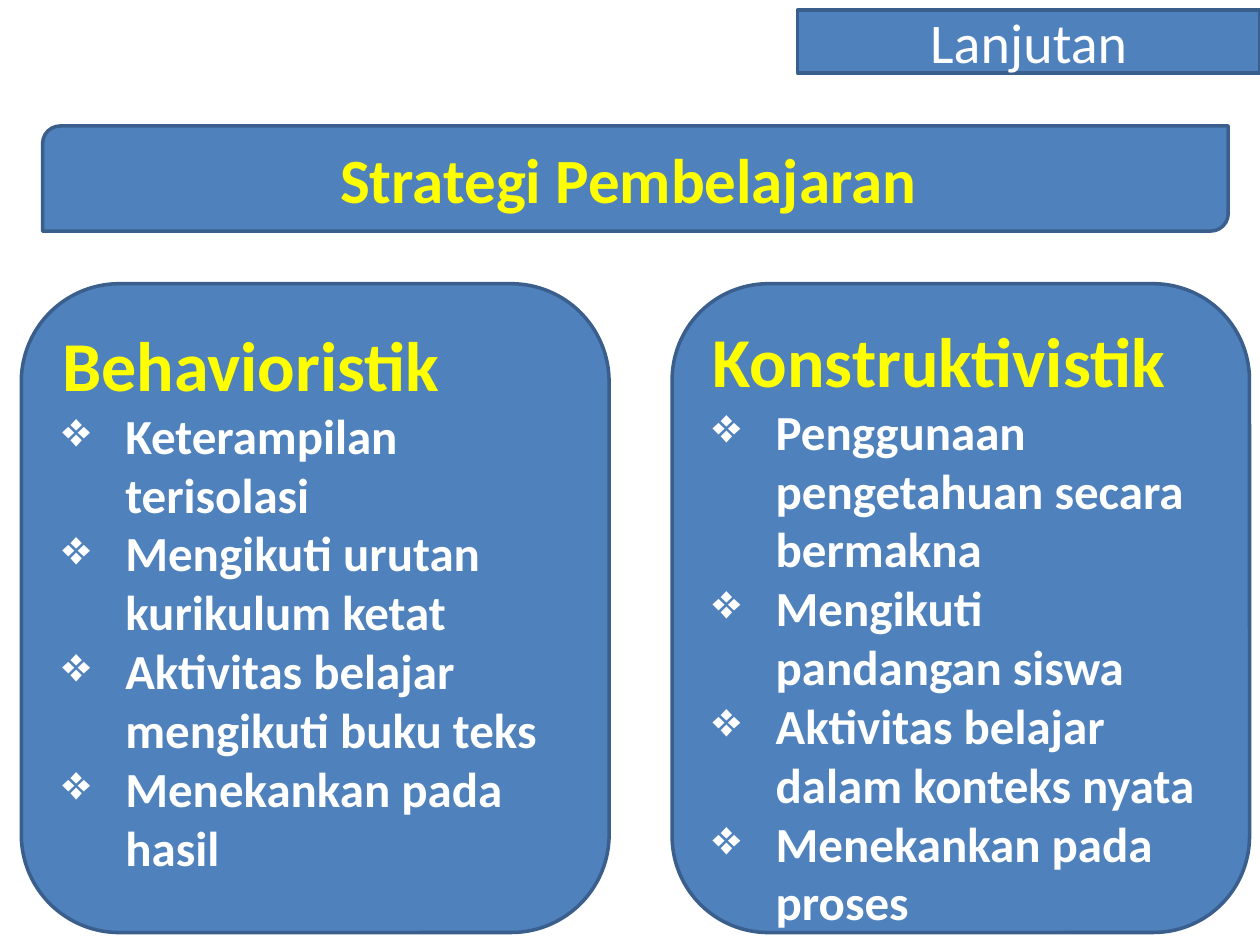
from lxml import etree
from pptx import Presentation
from pptx.dml.color import RGBColor
from pptx.enum.shapes import MSO_SHAPE
from pptx.enum.text import MSO_ANCHOR, PP_ALIGN
from pptx.oxml.ns import qn
from pptx.util import Cm, Pt

RECT = MSO_SHAPE.RECTANGLE
ROUND = MSO_SHAPE.ROUNDED_RECTANGLE
DIAG = MSO_SHAPE.ROUND_2_DIAG_RECTANGLE
TOP, MIDDLE = MSO_ANCHOR.TOP, MSO_ANCHOR.MIDDLE
LEFT, CENTER = PP_ALIGN.LEFT, PP_ALIGN.CENTER

BLUE = RGBColor(0x4F, 0x81, 0xBD)
NAVY = RGBColor(0x3A, 0x5F, 0x8C)
YELLOW = RGBColor(0xFF, 0xFF, 0x00)
WHITE = RGBColor(0xFF, 0xFF, 0xFF)


class Board:
    """Holds the style and the current slide."""

    font = "Calibri"
    indent = Cm(1.27)

    def __init__(self, slide):
        self.slide = slide

    def box(self, kind, x, y, w, h, anchor=MIDDLE):
        shape = self.slide.shapes.add_shape(kind, Cm(x), Cm(y), Cm(w), Cm(h))
        shape.shadow.inherit = False
        shape.fill.solid()
        shape.fill.fore_color.rgb = BLUE
        shape.line.color.rgb = NAVY
        shape.line.width = Pt(2)
        frame = shape.text_frame
        frame.word_wrap = True
        frame.vertical_anchor = anchor
        return frame

    def label(self, para, text, size, color, bold=True, align=LEFT):
        para.text = text
        para.alignment = align
        style = {"name": self.font, "size": Pt(size), "bold": bold}
        for key, value in style.items():
            setattr(para.font, key, value)
        para.font.color.rgb = color

    def bullet(self, para, text):
        props = para._p.get_or_add_pPr()
        props.set("marL", str(self.indent))
        props.set("indent", str(-self.indent))
        etree.SubElement(props, qn("a:buChar"), char="❖")
        self.label(para, text, 28, WHITE)

    def banner(self, kind, spot, text, size, color, bold):
        frame = self.box(kind, *spot)
        self.label(frame.paragraphs[0], text, size, color, bold, CENTER)

    def panel(self, x, w, inset, title, items):
        frame = self.box(ROUND, x, 5.72, w, 13.08, TOP)
        frame.margin_top = Cm(inset)
        self.label(frame.paragraphs[0], title, 40, YELLOW)
        for item in items:
            self.bullet(frame.add_paragraph(), item)


def main():
    deck = Presentation()
    deck.slide_width, deck.slide_height = Cm(25.4), Cm(19.05)
    board = Board(deck.slides.add_slide(deck.slide_layouts[6]))

    # Corner label
    board.banner(RECT, (16.08, 0.2, 9.32, 1.27), "Lanjutan", 32, WHITE, False)

    # The two approaches side by side
    board.panel(0.43, 11.85, 0.18, "Behavioristik", [
        "Keterampilan terisolasi",
        "Mengikuti urutan kurikulum ketat",
        "Aktivitas belajar mengikuti buku teks",
        "Menekankan pada hasil",
    ])
    board.panel(13.55, 11.64, 0.11, "Konstruktivistik", [
        "Penggunaan pengetahuan secara bermakna",
        "Mengikuti pandangan siswa",
        "Aktivitas belajar dalam konteks nyata",
        "Menekankan pada proses",
    ])

    # Heading
    board.banner(DIAG, (0.86, 2.54, 23.9, 2.12), "Strategi Pembelajaran ",
                 36, YELLOW, True)

    deck.save("out.pptx")


if __name__ == "__main__":
    main()
